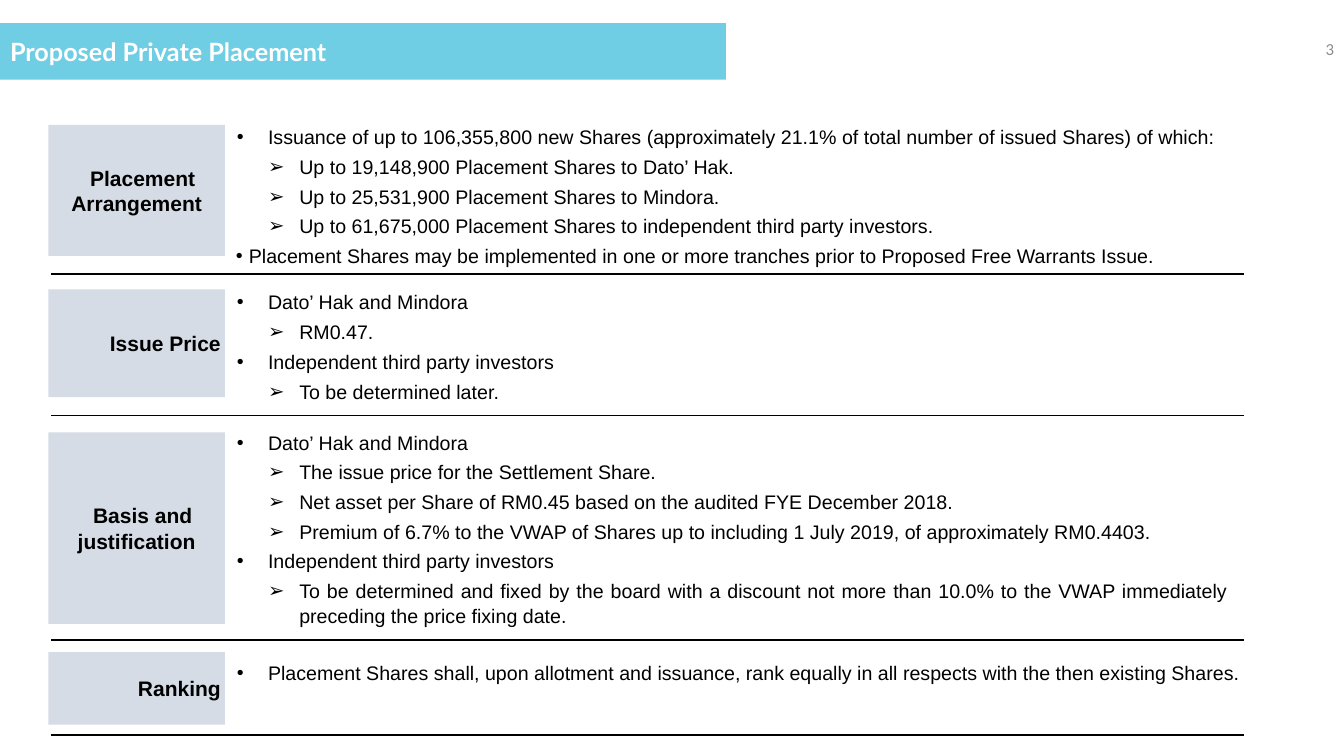
import pptx
import pptx.util
import pptx.dml.color
import pptx.enum.shapes
import pptx.enum.text
from dataclasses import dataclass
from lxml import etree
from pptx.util import Inches, Pt

RGB = pptx.dml.color.RGBColor.from_string
ALIGN = pptx.enum.text.PP_ALIGN
MIDDLE = pptx.enum.text.MSO_ANCHOR.MIDDLE
NS = "{http://schemas.openxmlformats.org/drawingml/2006/main}"


@dataclass(frozen=True)
class Theme:
    banner: str = "6FCDE4"
    label: str = "D6DCE5"
    ink: str = "000000"
    white: str = "FFFFFF"
    grey: str = "8C8C8C"
    title_pt: int = 18
    label_pt: int = 15
    body_pt: int = 14
    number_pt: int = 12


T = Theme()
# bullet kind: (character, left margin, hanging indent)
BULLETS = {
    "main": ("•", 0.32, 0.31),
    "sub": ("➢", 0.63, 0.31),
    "tight": ("•", 0.13, 0.13),
}
# label, label alignment, label top and height, text top, width and height, rule y, bullets
SECTIONS = [
    ("Placement Arrangement", ALIGN.CENTER, 1.24, 1.3, 1.18, 10.15, 1.5, 2.72, [
        ("main", "Issuance of up to 106,355,800 new Shares (approximately 21.1% of total number of issued Shares) of which:"),
        ("sub", "Up to 19,148,900 Placement Shares to Dato’ Hak."),
        ("sub", "Up to 25,531,900 Placement Shares to Mindora."),
        ("sub", "Up to 61,675,000 Placement Shares to independent third party investors."),
        ("tight", "Placement Shares may be implemented in one or more tranches prior to Proposed Free Warrants Issue."),
    ]),
    ("Issue Price", ALIGN.RIGHT, 2.87, 1.07, 2.82, 10.17, 1.21, 4.12, [
        ("main", "Dato’ Hak and Mindora"),
        ("sub", "RM0.47."),
        ("main", "Independent third party investors"),
        ("sub", "To be determined later."),
    ]),
    ("Basis and justification", ALIGN.CENTER, 4.29, 1.9, 4.21, 10.04, 2.32, 6.35, [
        ("main", "Dato’ Hak and Mindora"),
        ("sub", "The issue price for the Settlement Share."),
        ("sub", "Net asset per Share of RM0.45 based on the audited FYE December 2018."),
        ("sub", "Premium of 6.7% to the VWAP of Shares up to including 1 July 2019, of approximately RM0.4403."),
        ("main", "Independent third party investors"),
        ("sub", "To be determined and fixed by the board with a discount not more than 10.0% to the VWAP immediately preceding the price fixing date."),
    ]),
    ("Ranking", ALIGN.RIGHT, 6.47, 0.72, 6.5, 10.17, 0.34, 7.29, [
        ("main", "Placement Shares shall, upon allotment and issuance, rank equally in all respects with the then existing Shares."),
    ]),
]


def write(p, text, font, size, color, align, bold=False):
    p.text = text
    p.alignment = align
    f = p.runs[0].font
    f.name, f.size, f.bold = font, Pt(size), bold
    f.color.rgb = RGB(color)


def set_bullet(p, kind):
    char, margin, hang = BULLETS[kind]
    pPr = p._p.get_or_add_pPr()
    pPr.set("marL", str(Inches(margin)))
    pPr.set("indent", str(-Inches(hang)))
    etree.SubElement(pPr, NS + "buFont", typeface="Arial")
    etree.SubElement(pPr, NS + "buChar", char=char)


prs = pptx.Presentation()
prs.slide_width, prs.slide_height = Inches(13.33), Inches(7.5)
s = prs.slides.add_slide(prs.slide_layouts[5])

title = s.shapes.title
title.left, title.top, title.width, title.height = Inches(0), Inches(0.23), Inches(7.2), Inches(0.56)
title.fill.solid()
title.fill.fore_color.rgb = RGB(T.banner)
title.text_frame.vertical_anchor = MIDDLE
write(title.text_frame.paragraphs[0], "Proposed Private Placement", "Lato", T.title_pt, T.white, ALIGN.LEFT, True)

number = s.shapes.add_textbox(Inches(10.33), Inches(0.28), Inches(3), Inches(0.4))
number.text_frame.word_wrap = True
number.text_frame.vertical_anchor = MIDDLE
write(number.text_frame.paragraphs[0], "3", "Calibri", T.number_pt, T.grey, ALIGN.RIGHT)

for label, align, top, height, text_top, text_width, text_height, rule_y, bullets in SECTIONS:
    sp = s.shapes.add_shape(pptx.enum.shapes.MSO_SHAPE.RECTANGLE,
                            Inches(0.48), Inches(top), Inches(1.75), Inches(height))
    sp.shadow.inherit = False
    sp.fill.solid()
    sp.fill.fore_color.rgb = RGB(T.label)
    sp.line.fill.background()
    tf = sp.text_frame
    tf.word_wrap = True
    tf.vertical_anchor = MIDDLE
    tf.margin_left = tf.margin_right = Inches(0.04)
    p = tf.paragraphs[0]
    write(p, label, "Arial", T.label_pt, T.ink, align, True)
    p._p.get_or_add_pPr().set("indent", str(Inches(0.12)))

    box = s.shapes.add_textbox(Inches(2.24), Inches(text_top), Inches(text_width), Inches(text_height))
    tf = box.text_frame
    tf.word_wrap = True
    tf.auto_size = pptx.enum.text.MSO_AUTO_SIZE.SHAPE_TO_FIT_TEXT
    for i, (kind, text) in enumerate(bullets):
        p = tf.add_paragraph() if i else tf.paragraphs[0]
        p.line_spacing = 1.05
        if i:
            p.space_before = Pt(3.6)
        set_bullet(p, kind)
        write(p, text, "Arial", T.body_pt, T.ink, ALIGN.JUSTIFY)

    rule = s.shapes.add_connector(pptx.enum.shapes.MSO_CONNECTOR.STRAIGHT,
                                  Inches(0.51), Inches(rule_y), Inches(12.34), Inches(rule_y))
    rule.line.color.rgb = RGB(T.ink)
    rule.line.width = Pt(1)
    etree.SubElement(rule._element.spPr, NS + "effectLst")

prs.save("out.pptx")
